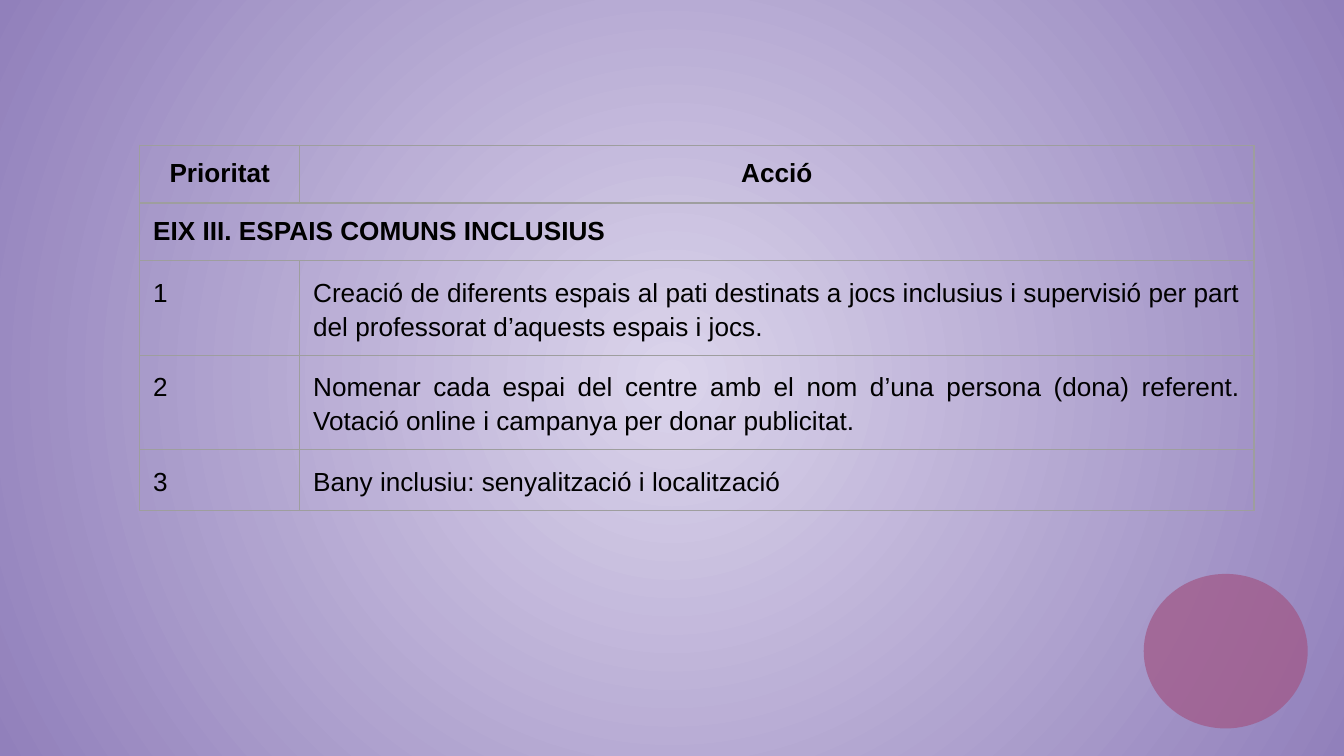
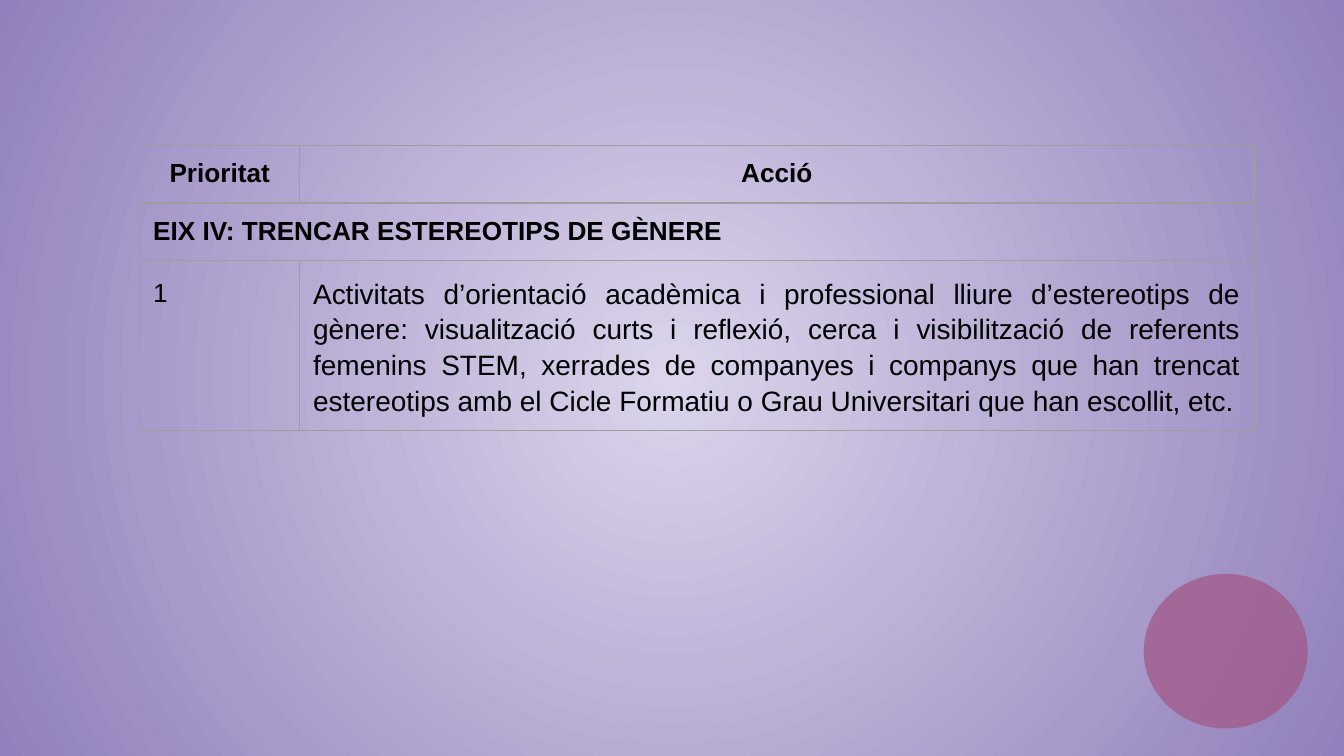
from dataclasses import dataclass

from lxml import etree
from pptx import Presentation
from pptx.dml.color import RGBColor
from pptx.enum import shapes, text
from pptx.oxml import ns
from pptx.util import Inches, Pt


@dataclass(frozen=True)
class Theme:
    center: str = "DBD4EB"
    edge: str = "9180BB"
    circle: str = "A15887"
    circle_opacity: int = 73
    border: str = "9E9E9E"
    border_width: float = 0.75
    ink: str = "000000"
    font: str = "Arial"
    size: int = 14
    large_size: int = 15
    line_spacing: float = 1.15
    margin: float = 0.1


THEME = Theme()
SLIDE_WIDTH = Inches(10)
SLIDE_HEIGHT = SLIDE_WIDTH * 9 // 16
CIRCLE_BOX = (8.51, 4.27, 1.22, 1.15)
TABLE_ORIGIN = (1.04, 1.08)
COLUMN_WIDTHS = (1.19, 7.1)
ROW_HEIGHT = 0.43
HEADINGS = ("Prioritat", "Acció")
AXES = [
    (
        "EIX III. ESPAIS COMUNS INCLUSIUS",
        [
            "Creació de diferents espais al pati destinats a jocs inclusius i supervisió "
            "per part del professorat d’aquests espais i jocs.",
            "Nomenar cada espai del centre amb el nom d’una persona (dona) referent. "
            "Votació online i campanya per donar publicitat.",
            "Bany inclusiu: senyalització i localització",
        ],
        THEME.size,
    ),
    (
        "EIX IV: TRENCAR ESTEREOTIPS DE GÈNERE",
        [
            "Activitats d’orientació acadèmica i professional lliure d’estereotips de "
            "gènere: visualització curts i reflexió, cerca i visibilització de referents "
            "femenins STEM, xerrades de companyes i companys que han trencat estereotips "
            "amb el Cicle Formatiu o Grau Universitari que han escollit, etc.",
        ],
        THEME.large_size,
    ),
]


def apply_format(target, values):
    for name, value in values.items():
        setattr(target, name, value)


def add_element(parent, tag, **attributes):
    return etree.SubElement(parent, ns.qn(tag), attributes)


def paint_background(slide):
    fill = slide.background.fill
    fill.gradient()
    for stop, color, position in zip(fill.gradient_stops, (THEME.center, THEME.edge), (0, 1)):
        stop.color.rgb = RGBColor.from_string(color)
        stop.position = position
    gradient = slide.element.find(".//" + ns.qn("a:gradFill"))
    gradient.remove(gradient.find(ns.qn("a:lin")))
    radial = add_element(gradient, "a:path", path="circle")
    add_element(radial, "a:fillToRect", l="50000", t="50000", r="50000", b="50000")


def add_circle(slide, box):
    circle = slide.shapes.add_shape(shapes.MSO_SHAPE.OVAL, *map(Inches, box))
    circle.shadow.inherit = False
    circle.line.fill.background()
    circle.fill.solid()
    circle.fill.fore_color.rgb = RGBColor.from_string(THEME.circle)
    color = circle.element.spPr.find(".//" + ns.qn("a:srgbClr"))
    add_element(color, "a:alpha", val=str(THEME.circle_opacity * 1000))


def style_cell(cell):
    cell.fill.background()
    apply_format(cell, {
        f"margin_{side}": Inches(THEME.margin) for side in ("left", "right", "top", "bottom")
    })
    properties = cell._tc.get_or_add_tcPr()
    for index, side in enumerate(("L", "R", "T", "B")):
        line = etree.Element(ns.qn(f"a:ln{side}"), w=str(Pt(THEME.border_width)))
        add_element(add_element(line, "a:solidFill"), "a:srgbClr", val=THEME.border)
        properties.insert(index, line)


def write_cell(cell, content, alignment, size=THEME.size, bold=False, line_spacing=None):
    paragraph = cell.text_frame.paragraphs[0]
    apply_format(paragraph, {"alignment": alignment, "line_spacing": line_spacing})
    run = paragraph.add_run()
    run.text = content
    apply_format(run.font, {"name": THEME.font, "size": Pt(size), "bold": bold})
    run.font.color.rgb = RGBColor.from_string(THEME.ink)


def add_action_table(slide, origin, title, actions, action_size):
    row_count = len(actions) + 2
    table = slide.shapes.add_table(
        row_count, len(COLUMN_WIDTHS), *map(Inches, origin),
        Inches(sum(COLUMN_WIDTHS)), Inches(ROW_HEIGHT * row_count),
    ).table
    apply_format(table, {"first_row": False, "horz_banding": False})
    for column, width in zip(table.columns, COLUMN_WIDTHS):
        column.width = Inches(width)
    for row in table.rows:
        row.height = Inches(ROW_HEIGHT)
    for cell in table.iter_cells():
        style_cell(cell)

    align = text.PP_ALIGN
    for column, heading in enumerate(HEADINGS):
        write_cell(table.cell(0, column), heading, align.CENTER, bold=True)
    table.cell(1, 0).merge(table.cell(1, 1))
    write_cell(table.cell(1, 0), title, align.LEFT, bold=True)
    spacing = THEME.line_spacing
    for priority, action in enumerate(actions, start=1):
        row = priority + 1
        write_cell(table.cell(row, 0), str(priority), align.LEFT, line_spacing=spacing)
        write_cell(table.cell(row, 1), action, align.JUSTIFY, action_size, line_spacing=spacing)


def add_axis_slide(presentation, title, actions, action_size):
    slide = presentation.slides.add_slide(presentation.slide_layouts[6])
    paint_background(slide)
    add_circle(slide, CIRCLE_BOX)
    add_action_table(slide, TABLE_ORIGIN, title, actions, action_size)


def main():
    presentation = Presentation()
    apply_format(presentation, {"slide_width": SLIDE_WIDTH, "slide_height": SLIDE_HEIGHT})
    for axis in AXES:
        add_axis_slide(presentation, *axis)
    presentation.save("out.pptx")


if __name__ == "__main__":
    main()
